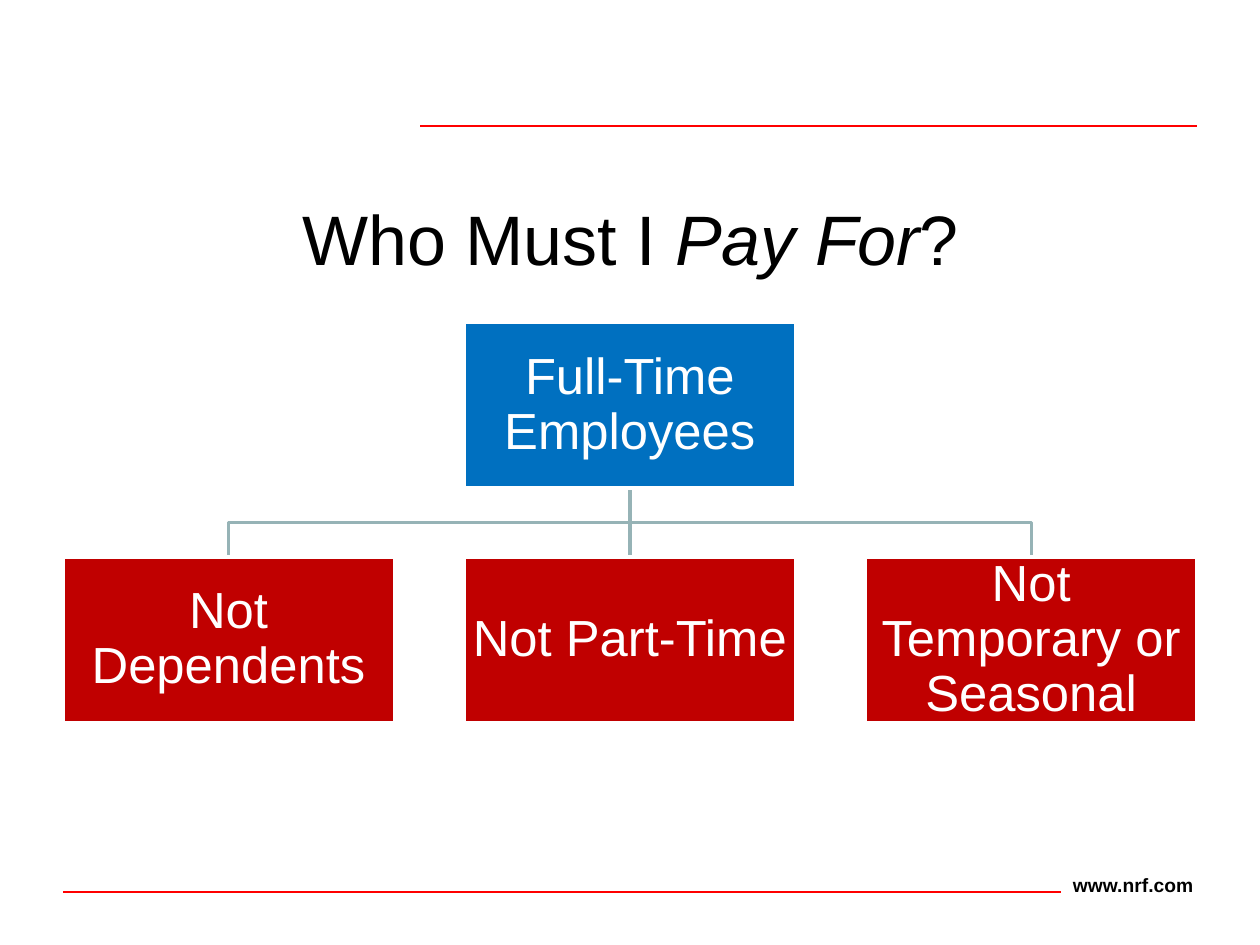
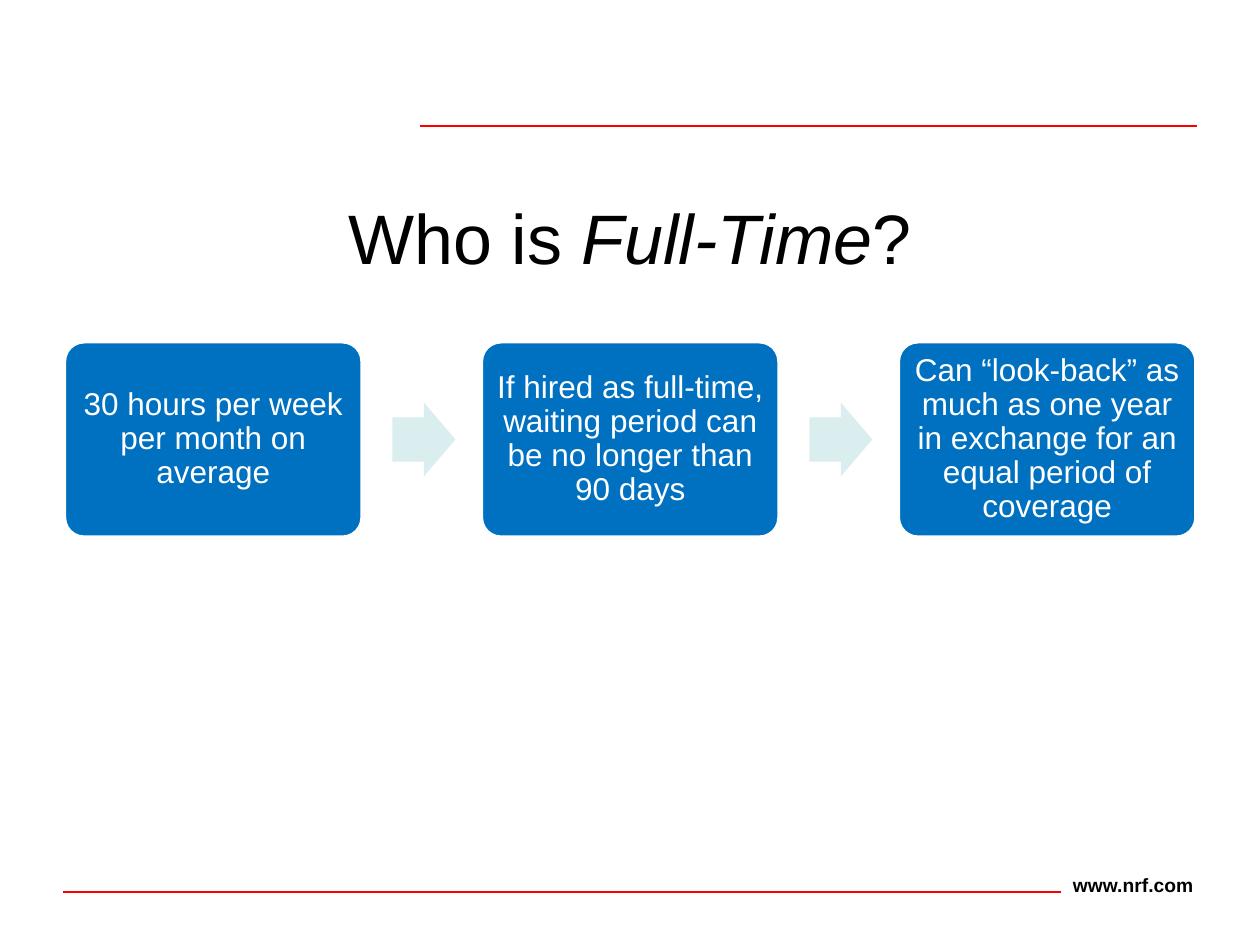
from collections import namedtuple

from lxml import etree
from pptx import Presentation
from pptx.dml.color import RGBColor
from pptx.enum import shapes, text
from pptx.oxml.ns import qn
from pptx.util import Cm, Pt

COLOURS = {
    "rule": "FF0000",
    "ink": "000000",
    "paper": "FFFFFF",
    "blue": "0070C0",
    "red": "C00000",
    "branch": "96B3B6",
    "arrow": "DAEDEF",
}
FONT = "Arial"
SHAPE = shapes.MSO_SHAPE

# Lengths in centimetres
Box = namedtuple("Box", "left top width height")


def colour(name):
    return RGBColor.from_string(COLOURS[name])


def in_cm(box):
    return [Cm(length) for length in box]


def write(frame, *pieces, size, ink="ink", bold=False, align=None, inset=None,
          spacing=None, anchor=text.MSO_ANCHOR.MIDDLE):
    """Fill a frame with one paragraph; a piece is text or (text, italic)."""
    frame.word_wrap = True
    frame.vertical_anchor = anchor
    if inset is not None:
        frame.margin_left = frame.margin_right = Cm(inset)
        frame.margin_top = frame.margin_bottom = Cm(inset)
    paragraph = frame.paragraphs[0]
    paragraph.alignment = align
    paragraph.line_spacing = spacing
    for piece in pieces:
        words, italic = (piece, False) if isinstance(piece, str) else piece
        run = paragraph.add_run()
        run.text = words
        run.font.name = FONT
        run.font.size = Pt(size)
        run.font.bold = bold
        run.font.italic = italic
        run.font.color.rgb = colour(ink)


def set_line(shape, name, width):
    shape.line.color.rgb = colour(name)
    shape.line.width = Pt(width)


def add_line(slide, x1, y1, x2, y2, name, width):
    line = slide.shapes.add_connector(
        shapes.MSO_CONNECTOR.STRAIGHT, Cm(x1), Cm(y1), Cm(x2), Cm(y2))
    set_line(line, name, width)
    etree.SubElement(line._element.spPr, qn("a:effectLst"))


def add_filled(slide, kind, box, fill, adjust=()):
    shape = slide.shapes.add_shape(kind, *in_cm(box))
    shape.shadow.inherit = False
    shape.fill.solid()
    shape.fill.fore_color.rgb = colour(fill)
    shape.line.fill.background()
    for index, value in enumerate(adjust):
        shape.adjustments[index] = value
    return shape


def add_card(slide, kind, box, fill, words, size, inset, adjust=()):
    card = add_filled(slide, kind, box, fill, adjust)
    set_line(card, "paper", 2)
    write(card.text_frame, words, size=size, ink="paper", inset=inset,
          spacing=0.9, align=text.PP_ALIGN.CENTER)


def row_of_boxes(box, count, width, height):
    """Boxes with equal gaps across the full width of the given box."""
    step = (box.width - width) / (count - 1)
    return [Box(box.left + i * step, box.top, width, height) for i in range(count)]


def add_base(prs, title_box, *title):
    """Slide with the shared rules, web address and title."""
    slide = prs.slides.add_slide(prs.slide_layouts[6])
    add_line(slide, 8.47, 2.54, 24.13, 2.54, "rule", 1)
    add_line(slide, 1.27, 17.98, 21.38, 17.98, "rule", 1)
    address = slide.shapes.add_textbox(*in_cm(Box(21.38, 17.48, 3.18, 0.71)))
    write(address.text_frame, "www.nrf.com", size=11, bold=True,
          anchor=text.MSO_ANCHOR.TOP)
    heading = slide.shapes.add_textbox(*in_cm(title_box))
    write(heading.text_frame, *title, size=40, align=text.PP_ALIGN.CENTER)
    return slide


def add_branch(slide, start, end):
    """Open elbow line that turns halfway down."""
    (x1, y1), (x2, y2) = start, end
    middle = (y1 + y2) / 2
    builder = slide.shapes.build_freeform(Cm(x1), Cm(y1))
    builder.add_line_segments(
        [(Cm(x), Cm(y)) for x, y in ((x1, middle), (x2, middle), (x2, y2))],
        close=False)
    branch = builder.convert_to_shape()
    branch.shadow.inherit = False
    branch.fill.background()
    set_line(branch, "branch", 2)


def add_tree(slide, box, covered, excluded):
    """One covered group above a row of excluded groups."""
    width, height = 6.68, 3.34
    centre = box.left + box.width / 2
    root = Box(centre - width / 2, box.top, width, height)
    lower = box._replace(top=box.top + box.height - height)
    leaves = row_of_boxes(lower, len(excluded), width, height)

    # Branches lie behind the cards
    start = centre, root.top + height
    for leaf in leaves:
        end = leaf.left + width / 2, leaf.top
        if abs(end[0] - centre) < 0.01:
            add_line(slide, *start, *end, "branch", 2)
        else:
            add_branch(slide, start, end)

    add_card(slide, SHAPE.RECTANGLE, root, "blue", covered, 29, 0.05)
    for leaf, words in zip(leaves, excluded):
        add_card(slide, SHAPE.RECTANGLE, leaf, "red", words, 29, 0.05)


def add_flow(slide, box, rules):
    """Row of rounded cards with an arrow in each gap."""
    width, arrow_width, arrow_height, arrow_gap = 6, 1.27, 1.49, 0.61
    cards = row_of_boxes(box, len(rules), width, box.height)
    for index, (card, words) in enumerate(zip(cards, rules)):
        if index:
            arrow = Box(cards[index - 1].left + width + arrow_gap,
                        box.top + (box.height - arrow_height) / 2,
                        arrow_width, arrow_height)
            add_filled(slide, SHAPE.RIGHT_ARROW, arrow, "arrow", (0.6, 0.5))
        add_card(slide, SHAPE.ROUNDED_RECTANGLE, card, "blue", words, 18, 0.18, (0.1,))


def main():
    prs = Presentation()
    prs.slide_width, prs.slide_height = Cm(25.4), Cm(19.05)

    # Who is paid for
    pay_for = add_base(prs, Box(0.43, 4.01, 24.56, 1.57),
                       "Who Must I ", ("Pay For", True), "?")
    add_tree(pay_for, Box(1.27, 6.5, 22.86, 8.07), "Full-Time Employees",
             ["Not Dependents", "Not Part-Time", "Not Temporary or Seasonal"])

    # Who counts as full-time
    full_time = add_base(prs, Box(1.27, 3.18, 22.86, 3.18),
                         "Who is ", ("Full-Time", True), "?")
    add_flow(full_time, Box(1.3, 6.89, 22.81, 3.94), [
        "30 hours per week per month on average",
        "If hired as full-time, waiting period can be no longer than 90 days",
        "Can “look-back” as much as one year in exchange for an equal period of coverage",
    ])

    prs.save("out.pptx")


if __name__ == "__main__":
    main()
